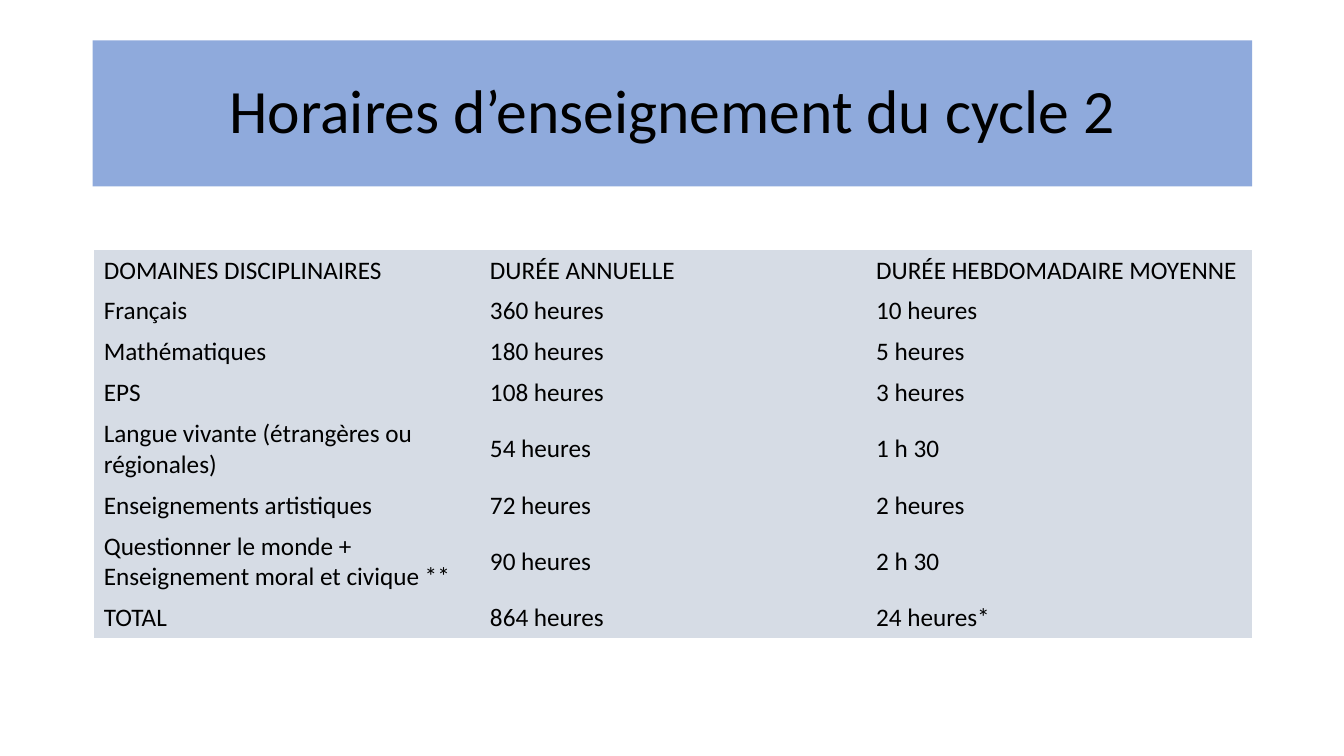
from pptx import Presentation
from pptx.dml.color import RGBColor
from pptx.enum.shapes import MSO_SHAPE
from pptx.enum.text import MSO_ANCHOR, PP_ALIGN
from pptx.oxml.ns import qn
from pptx.util import Inches, Pt

RECT = MSO_SHAPE.RECTANGLE
MIDDLE = MSO_ANCHOR.MIDDLE
LEFT, CENTER = PP_ALIGN.LEFT, PP_ALIGN.CENTER
FONT = "Calibri"
BLACK, BLUE, GREY = "000000", "8FAADC", "D6DCE5"
PLAIN = "{2D5ABB26-0587-4C30-8999-92F81FD0307C}"
LINE, PAD = 0.305, 0.05

TITLE = "Horaires d’enseignement du cycle 2"
HOURS = [
    (1, "DOMAINES DISCIPLINAIRES", "DURÉE ANNUELLE", "DURÉE HEBDOMADAIRE MOYENNE"),
    (1, "Français", "360 heures", "10 heures"),
    (1, "Mathématiques", "180 heures", "5 heures"),
    (1, "EPS", "108 heures", "3 heures"),
    (2, "Langue vivante (étrangères ou régionales)", "54 heures", "1 h 30"),
    (1, "Enseignements artistiques", "72 heures", "2 heures"),
    (2, "Questionner le monde + Enseignement moral et civique **", "90 heures", "2 h 30"),
    (1, "TOTAL", "864 heures", "24 heures*"),
]


def color(code):
    return RGBColor.from_string(code)


def paint(item, code):
    item.fill.solid()
    item.fill.fore_color.rgb = color(code)


def write(frame, text, size=18, align=LEFT, space=1.0):
    frame.word_wrap = True
    para = frame.paragraphs[0]
    para.alignment = align
    para.line_spacing = space
    run = para.add_run()
    run.text = text
    run.font.name = FONT
    run.font.size = Pt(size)
    run.font.color.rgb = color(BLACK)


def add_title(slide, left, top, width, height):
    box = slide.shapes.add_shape(
        RECT, Inches(left), Inches(top), Inches(width), Inches(height))
    box.shadow.inherit = False
    box.line.fill.background()
    paint(box, BLUE)
    box.text_frame.vertical_anchor = MIDDLE
    write(box.text_frame, TITLE, size=44, align=CENTER, space=0.9)


def add_hours(slide, left, top, width):
    heights = [lines * LINE + 2 * PAD for lines, *_ in HOURS]
    count = len(HOURS[0]) - 1
    table = slide.shapes.add_table(
        len(HOURS), count, Inches(left), Inches(top),
        Inches(width), Inches(sum(heights))).table
    table.first_row = False
    table.horz_banding = False
    table._tbl.tblPr.find(qn("a:tableStyleId")).text = PLAIN
    for col in table.columns:
        col.width = Inches(width / count)
    for row, height, (_, *texts) in zip(table.rows, heights, HOURS):
        row.height = Inches(height)
        for cell, text in zip(row.cells, texts):
            paint(cell, GREY)
            cell.vertical_anchor = MIDDLE
            write(cell.text_frame, text)


def main():
    deck = Presentation()
    deck.slide_width = Inches(13.33)
    deck.slide_height = Inches(7.5)
    slide = deck.slides.add_slide(deck.slide_layouts[6])
    add_title(slide, 0.92, 0.4, 11.5, 1.45)
    add_hours(slide, 0.93, 2.48, 11.49)
    deck.save("out.pptx")


if __name__ == "__main__":
    main()
